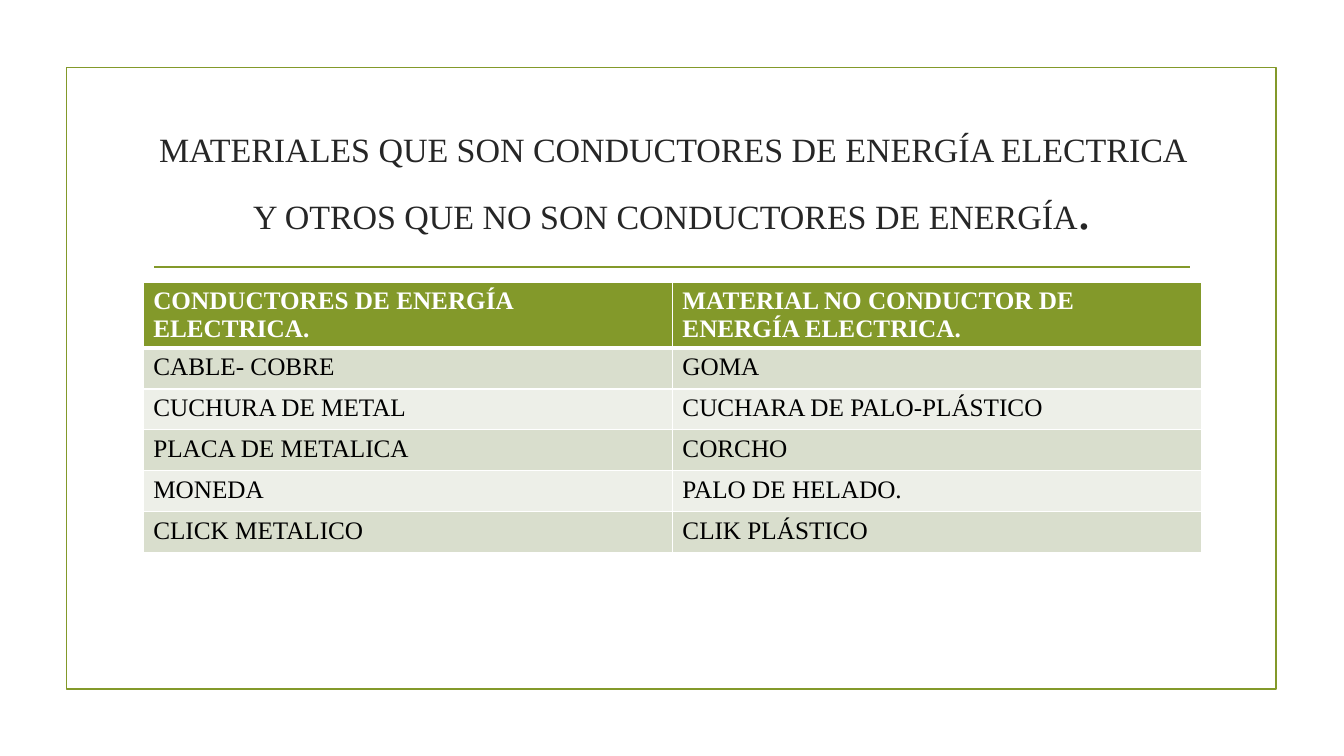
import pptx
import pptx.util
import pptx.dml.color
import pptx.enum.shapes
import pptx.enum.text
import pptx.oxml
import pptx.oxml.ns

Cm = pptx.util.Cm
Pt = pptx.util.Pt
RGBColor = pptx.dml.color.RGBColor

GREEN = RGBColor(0x83, 0x99, 0x2A)
PALE = RGBColor(0xD9, 0xDE, 0xCD)
PALER = RGBColor(0xED, 0xEF, 0xE8)
WHITE = RGBColor(0xFF, 0xFF, 0xFF)
BLACK = RGBColor(0, 0, 0)
DARK = RGBColor(0x26, 0x26, 0x26)

TITLE = [
    ("MATERIALES QUE SON CONDUCTORES DE ENERGÍA ELECTRICA "
     "Y OTROS QUE NO SON CONDUCTORES DE ENERGÍA", 24.3),
    (".", 39.6),
]
MATERIALS = [
    ("CONDUCTORES DE ENERGÍA ELECTRICA.", "MATERIAL NO CONDUCTOR DE ENERGÍA ELECTRICA."),
    ("CABLE- COBRE", "GOMA"),
    ("CUCHURA DE METAL", "CUCHARA DE PALO-PLÁSTICO"),
    ("PLACA DE METALICA", "CORCHO"),
    ("MONEDA", "PALO DE HELADO."),
    ("CLICK METALICO", "CLIK PLÁSTICO"),
]


def apply(target, values):
    for name, value in values.items():
        setattr(target, name, value)


class SlideBuilder:
    font_name = "Times New Roman"
    line_width = Pt(1.25)

    def __init__(self, deck):
        self.page = deck.slides.add_slide(deck.slide_layouts[5])
        self.shapes = self.page.shapes

    def add_span(self, para, text, size, color, bold=False):
        span = para.add_run()
        span.text = text
        apply(span.font, {"name": self.font_name, "size": Pt(size), "bold": bold})
        span.font.color.rgb = color

    def stroke(self, shape):
        shape.line.color.rgb = GREEN
        shape.line.width = self.line_width

    def frame(self, left, top, width, height):
        box = self.shapes.add_shape(
            pptx.enum.shapes.MSO_SHAPE.RECTANGLE, Cm(left), Cm(top), Cm(width), Cm(height))
        box.shadow.inherit = False
        box.fill.background()
        self.stroke(box)

    def rule(self, left, right, top):
        line = self.shapes.add_connector(
            pptx.enum.shapes.MSO_CONNECTOR.STRAIGHT, Cm(left), Cm(top), Cm(right), Cm(top))
        self.stroke(line)
        properties = line._element.spPr
        properties.append(properties.makeelement(pptx.oxml.ns.qn("a:effectLst"), {}))

    def title(self, spans, left, top, width, height):
        box = self.shapes.title
        self.shapes._spTree.append(box._element)
        apply(box, {"left": Cm(left), "top": Cm(top), "width": Cm(width), "height": Cm(height)})
        apply(box.text_frame, {
            "word_wrap": True,
            "auto_size": pptx.enum.text.MSO_AUTO_SIZE.NONE,
            "vertical_anchor": pptx.enum.text.MSO_ANCHOR.MIDDLE,
            "margin_top": Cm(0.28),
        })
        para = box.text_frame.paragraphs[0]
        apply(para, {"alignment": pptx.enum.text.PP_ALIGN.CENTER, "line_spacing": 1.08})
        for text, size in spans:
            self.add_span(para, text, size, DARK)

    def border(self, cell, side, width):
        properties = cell._tc.get_or_add_tcPr()
        properties.append(pptx.oxml.parse_xml(
            f'<a:{side} {pptx.oxml.ns.nsdecls("a")} w="{Pt(width)}">'
            f'<a:solidFill><a:srgbClr val="{WHITE}"/></a:solidFill></a:{side}>'))

    def table(self, rows, left, top, width, row_height):
        grid = self.shapes.add_table(
            len(rows), len(rows[0]), Cm(left), Cm(top), Cm(width),
            Cm(row_height * len(rows))).table
        for row_index, texts in enumerate(rows):
            header = row_index == 0
            fill = GREEN if header else (PALER, PALE)[row_index % 2]
            for column_index, text in enumerate(texts):
                cell = grid.cell(row_index, column_index)
                for side in ("lnL", "lnR", "lnT", "lnB"):
                    thick = (header and side == "lnB") or (row_index == 1 and side == "lnT")
                    self.border(cell, side, 3 if thick else 1)
                cell.fill.solid()
                cell.fill.fore_color.rgb = fill
                self.add_span(cell.text_frame.paragraphs[0], text, 18,
                              WHITE if header else BLACK, header)


def main():
    deck = pptx.Presentation()
    apply(deck, {"slide_width": Cm(33.87), "slide_height": Cm(19.05)})
    builder = SlideBuilder(deck)
    builder.frame(1.68, 1.7, 30.48, 15.67)
    builder.rule(3.89, 30, 6.73)
    builder.title(TITLE, 3.61, 2.72, 26.67, 3.63)
    builder.table(MATERIALS, 3.61, 7.11, 26.67, 1.03)
    deck.save("out.pptx")


if __name__ == "__main__":
    main()
